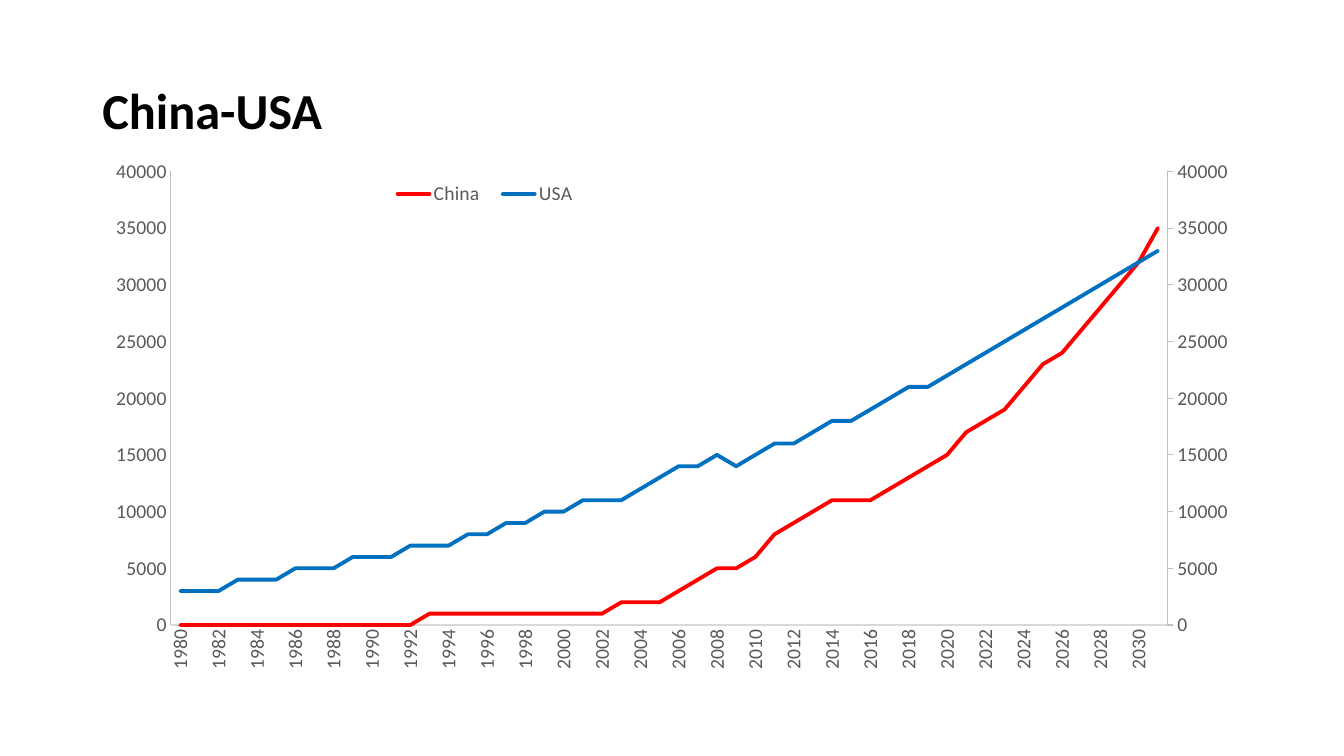
from copy import deepcopy

from lxml import etree
from pptx import Presentation
from pptx.chart.data import CategoryChartData
from pptx.dml.color import RGBColor
from pptx.enum.chart import XL_CHART_TYPE as CT, XL_LEGEND_POSITION as LP, XL_TICK_MARK as TM
from pptx.enum.text import MSO_ANCHOR
from pptx.oxml.ns import qn
from pptx.util import Pt

FONT = "Calibri"
COLORS = {
    "title": "000000",
    "label": "595959",
    "cat_line": "D9D9D9",
    "val_line": "BFBFBF",
    "China": "FF0000",
    "USA": "0070C0",
}
YEARS = range(1980, 2032)
GDP_THOUSANDS = {
    "China": [
        0, 0, 0, 0, 0, 0, 0, 0, 0, 0,
        0, 0, 0, 1, 1, 1, 1, 1, 1, 1,
        1, 1, 1, 2, 2, 2, 3, 4, 5, 5,
        6, 8, 9, 10, 11, 11, 11, 12, 13, 14,
        15, 17, 18, 19, 21, 23, 24, 26, 28, 30,
        32, 35,
    ],
    "USA": [
        3, 3, 3, 4, 4, 4, 5, 5, 5, 6,
        6, 6, 7, 7, 7, 8, 8, 9, 9, 10,
        10, 11, 11, 11, 12, 13, 14, 14, 15, 14,
        15, 16, 16, 17, 18, 18, 19, 20, 21, 21,
        22, 23, 24, 25, 26, 27, 28, 29, 30, 31,
        32, 33,
    ],
}


def rgb(name):
    return RGBColor.from_string(COLORS[name])


def style_font(font, size, color):
    font.name = FONT
    font.size = Pt(size)
    font.color.rgb = rgb(color)


def style_line(line, color, width):
    line.color.rgb = rgb(color)
    line.width = Pt(width)


def set_layout(parent, index, box, size, inner=False):
    for old in parent.findall(qn("c:layout")):
        parent.remove(old)
    layout = etree.Element(qn("c:layout"))
    manual = etree.SubElement(layout, qn("c:manualLayout"))
    if inner:
        etree.SubElement(manual, qn("c:layoutTarget")).set("val", "inner")
    for mode in ("xMode", "yMode"):
        etree.SubElement(manual, qn(f"c:{mode}")).set("val", "edge")
    for key, length, whole in zip("xywh", box, size * 2):
        etree.SubElement(manual, qn(f"c:{key}")).set("val", str(length / whole))
    parent.insert(index, layout)


def set_val(element, tag, value):
    element.find(qn(f"c:{tag}")).set("val", value)


def move_last_series_to_right_axis(plot_area):
    left_plot = plot_area.find(qn("c:lineChart"))
    cat_ax = plot_area.find(qn("c:catAx"))
    val_ax = plot_area.find(qn("c:valAx"))
    right_plot, hidden_cat, right_val = map(deepcopy, (left_plot, cat_ax, val_ax))

    left_plot.remove(left_plot.findall(qn("c:ser"))[-1])
    for ser in right_plot.findall(qn("c:ser"))[:-1]:
        right_plot.remove(ser)
    left_plot.addnext(right_plot)
    val_ax.addnext(right_val)
    right_val.addnext(hidden_cat)

    cat_id, val_id = "50010", "50020"
    for ax_id, value in zip(right_plot.findall(qn("c:axId")), (cat_id, val_id)):
        ax_id.set("val", value)
    for axis, own, other in ((hidden_cat, cat_id, val_id), (right_val, val_id, cat_id)):
        set_val(axis, "axId", own)
        set_val(axis, "crossAx", other)
    set_val(hidden_cat, "delete", "1")
    set_val(right_val, "axPos", "r")
    set_val(right_val, "crosses", "max")
    set_val(right_val, "majorTickMark", "out")


def style_axis(axis, line_color):
    axis.has_major_gridlines = False
    axis.major_tick_mark = TM.NONE
    axis.minor_tick_mark = TM.NONE
    style_font(axis.tick_labels.font, 14, "label")
    style_line(axis.format.line, line_color, 0.75)


def add_title(slide, x, y, w, h):
    tf = slide.shapes.add_textbox(Pt(x), Pt(y), Pt(w), Pt(h)).text_frame
    tf.word_wrap = True
    tf.vertical_anchor = MSO_ANCHOR.MIDDLE
    p = tf.paragraphs[0]
    p.text = "China-USA"
    p.line_spacing = 0.9
    font = p.runs[0].font
    style_font(font, 36, "title")
    font.bold = True


def add_gdp_chart(slide, x, y, w, h):
    data = CategoryChartData(number_format="0")
    data.categories = [str(year) for year in YEARS]
    for name, values in GDP_THOUSANDS.items():
        data.add_series(name, [value * 1000 for value in values])
    chart = slide.shapes.add_chart(CT.LINE, Pt(x), Pt(y), Pt(w), Pt(h), data).chart
    chart.has_title = False
    style_font(chart.font, 14, "label")

    plot_area = chart.element.find(f".//{qn('c:plotArea')}")
    plot = chart.plots[0]
    plot.vary_by_categories = False
    for series in plot.series:
        series.smooth = False
        style_line(series.format.line, series.name, 2.75)
    for ln in plot_area.iter(qn("a:ln")):
        ln.set("cap", "rnd")

    cat_axis, val_axis = chart.category_axis, chart.value_axis
    style_axis(cat_axis, "cat_line")
    style_axis(val_axis, "val_line")
    val_axis.minimum_scale = 0
    val_axis.maximum_scale = 40000
    val_axis.major_unit = 5000
    val_axis.tick_labels.number_format = "0"
    val_axis.tick_labels.number_format_is_linked = False

    cat_ax = plot_area.find(qn("c:catAx"))
    body = cat_ax.find(f"{qn('c:txPr')}/{qn('a:bodyPr')}")
    body.set("rot", "-5400000")
    body.set("vert", "horz")
    skip = etree.Element(qn("c:tickLblSkip"))
    skip.set("val", "2")
    cat_ax.find(qn("c:noMultiLvlLbl")).addprevious(skip)

    move_last_series_to_right_axis(plot_area)
    set_layout(plot_area, 0, (56, 16.5, 712, 324), (w, h), inner=True)

    chart.has_legend = True
    legend = chart.legend
    legend.position = LP.BOTTOM
    legend.include_in_layout = True
    style_font(legend.font, 14, "label")
    set_layout(chart.element.find(f".//{qn('c:legend')}"), 1, (206, 17.5, 149, 30), (w, h))


def main():
    prs = Presentation()
    prs.slide_width, prs.slide_height = Pt(960), Pt(540)
    s = prs.slides.add_slide(prs.slide_layouts[6])
    add_title(s, 66, 28.75, 828, 104.4)
    add_gdp_chart(s, 66, 106, 828, 380)
    prs.save("out.pptx")


if __name__ == "__main__":
    main()
